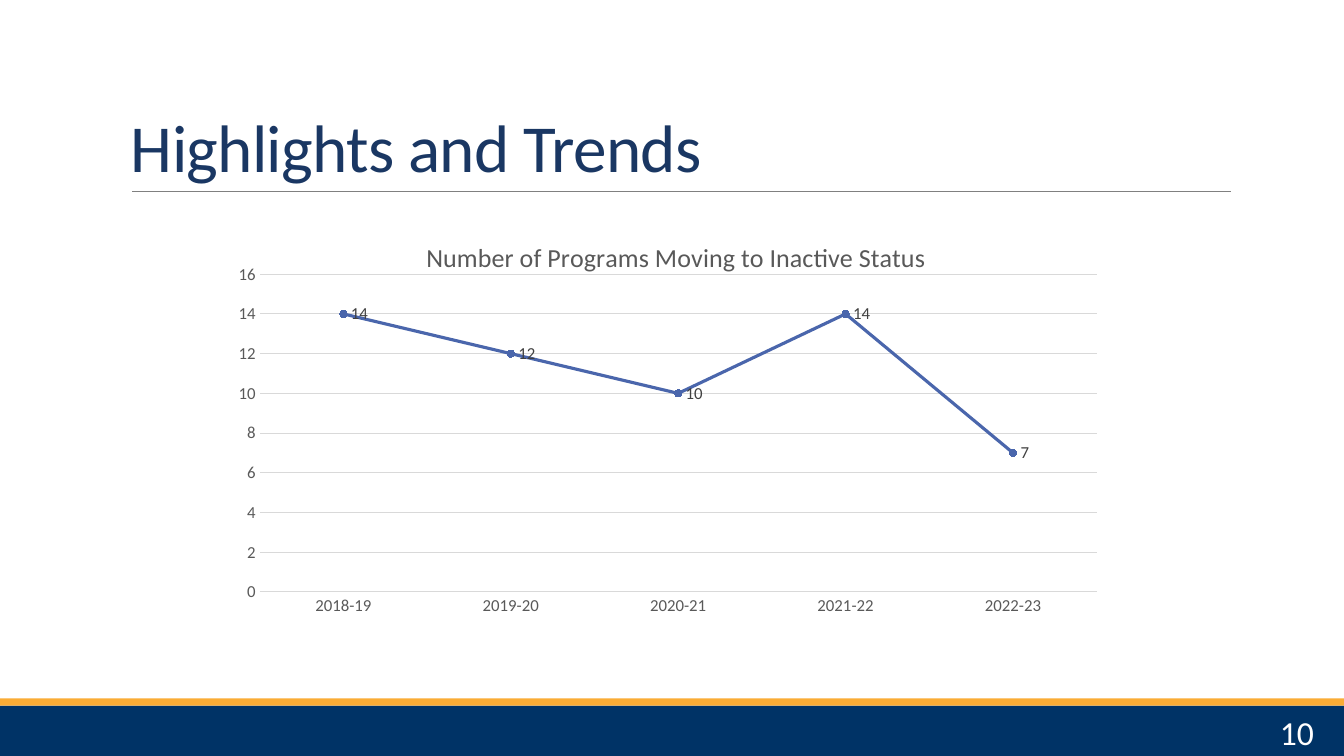
from lxml import etree
from pptx import Presentation
from pptx.chart.data import CategoryChartData
from pptx.dml.color import RGBColor
from pptx.enum.chart import XL_CHART_TYPE, XL_LABEL_POSITION, XL_MARKER_STYLE, XL_TICK_MARK
from pptx.enum.shapes import MSO_CONNECTOR, MSO_SHAPE
from pptx.enum.text import MSO_ANCHOR, PP_ALIGN
from pptx.oxml.ns import qn
from pptx.util import Inches, Pt

LINE = XL_CHART_TYPE.LINE_MARKERS_STACKED
RIGHT = XL_LABEL_POSITION.RIGHT
CIRCLE = XL_MARKER_STYLE.CIRCLE
NO_TICK = XL_TICK_MARK.NONE
STRAIGHT = MSO_CONNECTOR.STRAIGHT
RECT = MSO_SHAPE.RECTANGLE
BOTTOM, MIDDLE = MSO_ANCHOR.BOTTOM, MSO_ANCHOR.MIDDLE
ALIGN_L, ALIGN_R = PP_ALIGN.LEFT, PP_ALIGN.RIGHT

FONT = "Calibri"
COLORS = {
    "navy": "003366",
    "gold": "FAAC35",
    "rule": "808080",
    "title": "1A3763",
    "white": "FFFFFF",
    "gray": "595959",
    "grid": "D9D9D9",
    "label": "404040",
    "series": "4A66AC",
}
YEARS = ["2018-19", "2019-20", "2020-21", "2021-22", "2022-23"]
COUNTS = [14, 12, 10, 14, 7]


def color(name):
    return RGBColor.from_string(COLORS[name])


def style(font, size, name):
    font.name = FONT
    font.size = Pt(size)
    font.bold = False
    font.color.rgb = color(name)


def stroke(line, name, width):
    line.color.rgb = color(name)
    line.width = Pt(width)


def add_bar(slide, top, height, name):
    bar = slide.shapes.add_shape(RECT, 0, Inches(top), Inches(13.33), Inches(height))
    bar.shadow.inherit = False
    bar.fill.solid()
    bar.fill.fore_color.rgb = color(name)
    bar.line.fill.background()


def add_rule(slide, left, right, top):
    rule = slide.shapes.add_connector(
        STRAIGHT, Inches(left), Inches(top), Inches(right), Inches(top))
    stroke(rule.line, "rule", 0.5)
    etree.SubElement(rule._element.spPr, qn("a:effectLst"))


def add_text(slide, box, text, size, name, anchor, align):
    frame = slide.shapes.add_textbox(*map(Inches, box)).text_frame
    frame.word_wrap = True
    frame.vertical_anchor = anchor
    para = frame.paragraphs[0]
    para.alignment = align
    run = para.add_run()
    run.text = text
    style(run.font, size, name)
    return para, run


def place(parent, index, **values):
    old = parent.find(qn("c:layout"))
    if old is not None:
        parent.remove(old)
    layout = etree.Element(qn("c:layout"))
    manual = etree.SubElement(layout, qn("c:manualLayout"))
    for key, value in values.items():
        etree.SubElement(manual, qn("c:" + key)).set("val", str(value))
    parent.insert(index, layout)


def style_axis(axis):
    axis.major_tick_mark = NO_TICK
    axis.minor_tick_mark = NO_TICK
    style(axis.tick_labels.font, 12, "gray")


def style_series(series):
    series.smooth = False
    stroke(series.format.line, "series", 2.25)
    marker = series.marker
    marker.style = CIRCLE
    marker.size = 5
    marker.format.fill.solid()
    marker.format.fill.fore_color.rgb = color("series")
    stroke(marker.format.line, "series", 0.75)
    labels = series.data_labels
    labels.show_value = True
    labels.position = RIGHT
    style(labels.font, 12, "label")


def add_title(chart, text):
    title = chart.chart_title
    run = title.text_frame.paragraphs[0].add_run()
    run.text = text
    style(run.font, 18.6, "gray")
    title.include_in_layout = False
    place(title._element, 1, xMode="edge", yMode="edge", x=0.22, y=0.04)


def add_chart(slide, box):
    data = CategoryChartData()
    data.categories = YEARS
    data.add_series("Series 1", COUNTS)
    chart = slide.shapes.add_chart(LINE, *map(Inches, box), data).chart
    style(chart.font, 12, "gray")
    chart.has_legend = False
    add_title(chart, "Number of Programs Moving to Inactive Status")
    plot = chart.plots[0]
    plot.vary_by_categories = False
    style_series(plot.series[0])
    cats, vals = chart.category_axis, chart.value_axis
    style_axis(cats)
    style_axis(vals)
    stroke(cats.format.line, "grid", 0.75)
    vals.format.line.fill.background()
    vals.has_major_gridlines = True
    stroke(vals.major_gridlines.format.line, "grid", 0.75)
    vals.minimum_scale, vals.maximum_scale, vals.major_unit = 0, 16, 2
    area = chart._chartSpace.find(".//" + qn("c:plotArea"))
    place(area, 0, layoutTarget="inner", xMode="edge", yMode="edge",
          x=0.039, y=0.126, w=0.936, h=0.696)


def main():
    deck = Presentation()
    deck.slide_width = Inches(13.33)
    deck.slide_height = Inches(7.5)
    slide = deck.slides.add_slide(deck.slide_layouts[6])
    add_bar(slide, 7, 0.5, "navy")
    add_bar(slide, 6.93, 0.07, "gold")
    add_rule(slide, 1.31, 12.21, 1.9)
    para, run = add_text(slide, (1.2, 0.31, 11, 1.59), "Highlights and Trends",
                         48, "title", BOTTOM, ALIGN_L)
    para.line_spacing = 0.85
    run._r.get_or_add_rPr().set("spc", "-50")
    add_text(slide, (11.7, 7.06, 1.43, 0.4), "10", 24, "white", MIDDLE, ALIGN_R)
    add_chart(slide, (2.23, 2.15, 8.87, 4.53))
    deck.save("out.pptx")


if __name__ == "__main__":
    main()
